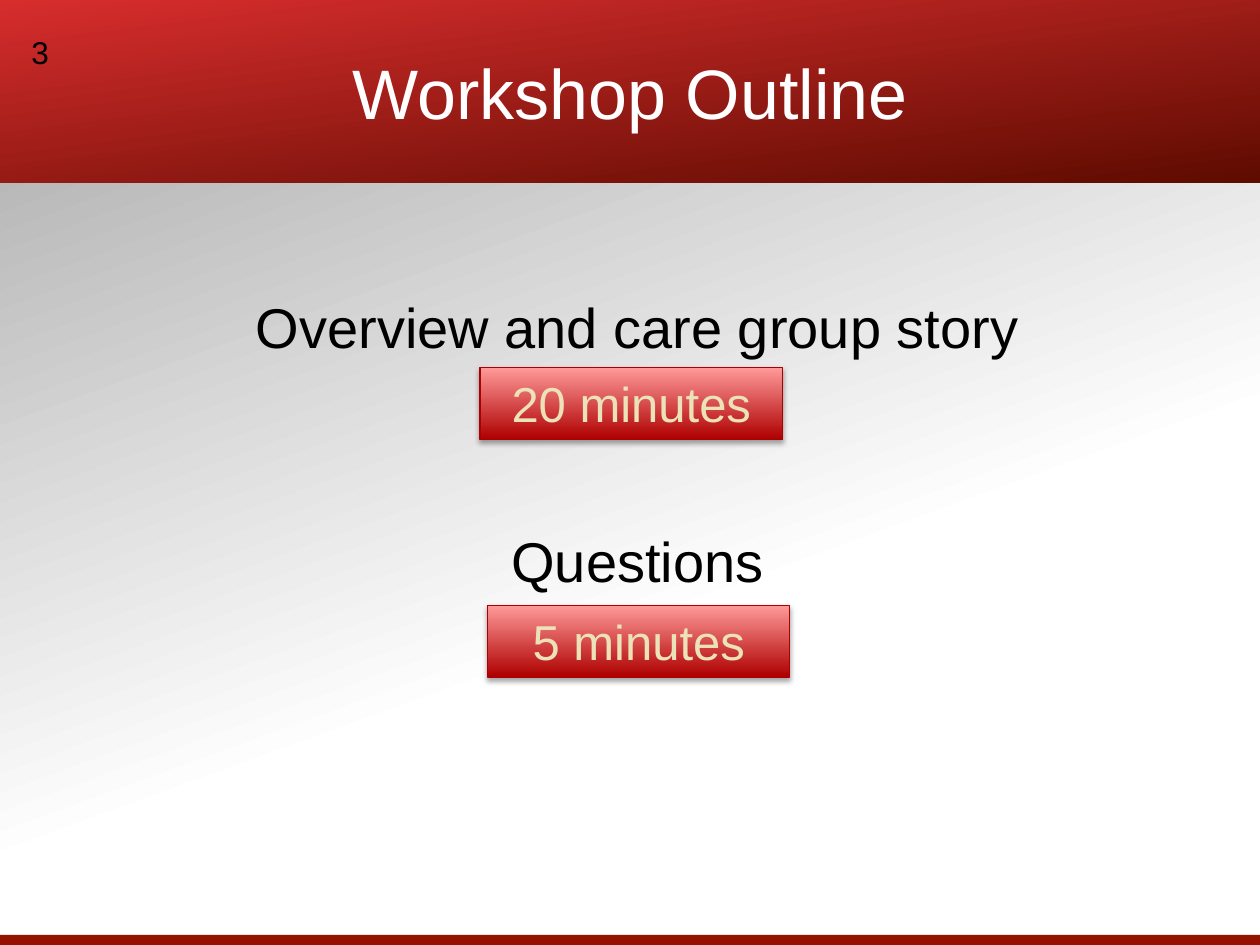
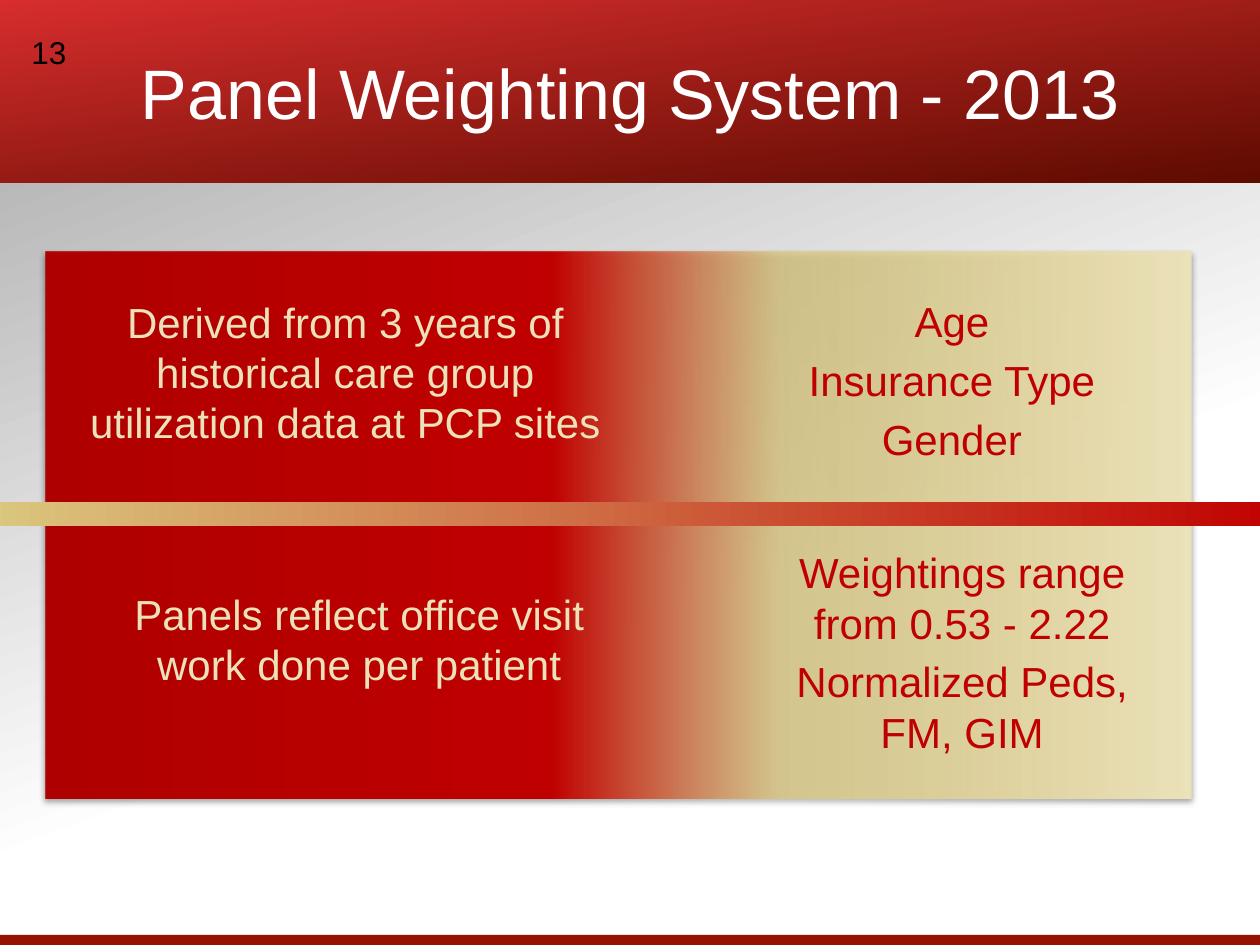
from dataclasses import dataclass
from typing import Optional

from lxml.etree import SubElement
from pptx import Presentation
from pptx.dml.color import RGBColor
from pptx.enum.shapes import MSO_SHAPE as Preset
from pptx.enum.text import MSO_ANCHOR as Anchor, MSO_AUTO_SIZE as AutoSize, PP_ALIGN as Align
from pptx.oxml.ns import qn
from pptx.util import Pt

FONT = "Arial"
COLORS = {
    "white": "FFFFFF", "black": "000000", "gray": "A6A6A6",
    "title_light": "D72D2D", "title_dark": "5E0B00", "footer": "951100",
    "deep_red": "AE0000", "red": "C00000", "pink": "FF9999", "edge": "AA0000",
    "gold": "DBC97F", "cream": "ECE2BA",
}


@dataclass(frozen=True)
class Box:
    left: float
    top: float
    width: float
    height: float

    def lengths(self) -> tuple:
        return Pt(self.left), Pt(self.top), Pt(self.width), Pt(self.height)


@dataclass(frozen=True)
class Stop:
    position: int
    color: str
    opacity: int = 100


@dataclass(frozen=True)
class Gradient:
    stops: tuple
    angle: int


@dataclass(frozen=True)
class Note:
    box: Box
    lines: tuple
    color: str
    indent: float = 0


# Shared look
BACKDROP = Gradient((Stop(0, "gray"), Stop(62, "white"), Stop(100, "white")), 70)
TITLE_BAND = Gradient((Stop(0, "title_light"), Stop(100, "title_dark")), 83)
PILL = Gradient((Stop(0, "deep_red"), Stop(100, "pink")), 270)
PANEL = Gradient((Stop(0, "deep_red"), Stop(44, "red"),
                  Stop(64, "gold", 76), Stop(100, "cream")), 0)
DIVIDER = Gradient((Stop(0, "gold"), Stop(100, "red")), 0)

TITLE_BOX = Box(0, 0, 720, 104.4)
FOOTER_BOX = Box(0, 534.2, 720, 7.2)
NUMBER_BOX = Box(10.8, 15.1, 64, 28.8)

# Workshop outline
AGENDA_BOX = Box(37.4, 163.4, 653.8, 182.2)
AGENDA = ("Overview and care group story", "Questions")
AGENDA_GAP = 95.4
DURATIONS = (
    Note(Box(274.3, 210.2, 172.8, 41), ("20 minutes",), "cream"),
    Note(Box(278.6, 346.0, 172.8, 41), ("5 minutes",), "cream"),
)

# Panel weighting
PANEL_BOX = Box(25.9, 144, 655.2, 312.5)
DIVIDER_BOX = Box(-13, 286.6, 750.2, 13.7)
SOURCE_NOTE = Note(
    Box(43.2, 165.6, 308.2, 108),
    ("Derived from 3 years of historical care group utilization data at PCP sites",),
    "cream")
WEIGHTING_NOTES = (
    Note(Box(403.2, 308.9, 270.7, 169.2),
         ("Weightings range from 0.53 - 2.22", "Normalized Peds, FM, GIM"), "red", 22.5),
    Note(Box(51.1, 332.6, 308.2, 122.4),
         ("Panels reflect office visit work done per patient",), "cream"),
    Note(Box(403.2, 165.6, 263.5, 108), ("Age", "Insurance Type", "Gender"), "red", 18),
)


def rgb(name: str) -> RGBColor:
    return RGBColor.from_string(COLORS[name])


def place(shape, box: Box) -> None:
    shape.left, shape.top, shape.width, shape.height = box.lengths()


def paint_gradient(fill, properties, gradient: Gradient) -> None:
    """Fill with any number of stops, at a clockwise angle."""
    fill.gradient()
    element = properties.find(qn("a:gradFill"))
    for child in list(element):
        element.remove(child)
    stop_list = SubElement(element, qn("a:gsLst"))
    for stop in gradient.stops:
        mark = SubElement(stop_list, qn("a:gs"), pos=str(stop.position * 1000))
        color = SubElement(mark, qn("a:srgbClr"), val=COLORS[stop.color])
        if stop.opacity < 100:
            SubElement(color, qn("a:alpha"), val=str(stop.opacity * 1000))
    SubElement(element, qn("a:lin"), ang=str(gradient.angle * 60000), scaled="0")


def cast_shadow(shape) -> None:
    effects = shape.element.spPr.find(qn("a:effectLst"))
    shadow = SubElement(effects, qn("a:outerShdw"), blurRad=str(Pt(3.1)),
                        dist=str(Pt(1.8)), dir="5400000", rotWithShape="0")
    color = SubElement(shadow, qn("a:srgbClr"), val=COLORS["black"])
    SubElement(color, qn("a:alpha"), val="35000")


def write(shape, lines: tuple, *, size: float, color: str, align=Align.CENTER,
          anchor=Anchor.TOP, gap: Optional[float] = None, indent: float = 0) -> None:
    """Write one paragraph a line; the gap defaults to a fifth of the size."""
    frame = shape.text_frame
    frame.word_wrap = True
    frame.auto_size = AutoSize.NONE
    frame.vertical_anchor = anchor
    for index, line in enumerate(lines):
        paragraph = frame.paragraphs[0] if index == 0 else frame.add_paragraph()
        run = paragraph.add_run()
        run.text = line
        properties = paragraph._p.get_or_add_pPr()
        properties.set("marL", str(Pt(indent)))
        properties.set("indent", "0")
        SubElement(properties, qn("a:buNone"))
        paragraph.alignment = align
        spacing = size * 0.2 if gap is None else gap
        paragraph.space_before = Pt(spacing if index else 0)
        run.font.name, run.font.size = FONT, Pt(size)
        run.font.color.rgb = rgb(color)


def add_block(slide, box: Box, gradient: Optional[Gradient] = None, *,
              preset=Preset.RECTANGLE, color: str = "footer",
              edge: Optional[str] = None, shadow: bool = False):
    block = slide.shapes.add_shape(preset, *box.lengths())
    block.shadow.inherit = False
    if gradient:
        paint_gradient(block.fill, block.element.spPr, gradient)
    else:
        block.fill.solid()
        block.fill.fore_color.rgb = rgb(color)
    if edge:
        block.line.color.rgb = rgb(edge)
        block.line.width = Pt(0.75)
    else:
        block.line.fill.background()
    if shadow:
        cast_shadow(block)
    return block


def add_note(slide, note: Note) -> None:
    words = slide.shapes.add_textbox(*note.box.lengths())
    write(words, note.lines, size=24, color=note.color, indent=note.indent)


def start_slide(deck, heading: str, number: str):
    """Add a slide with its title band, footer bar and number."""
    slide = deck.slides.add_slide(deck.slide_layouts[1])
    title = slide.shapes.title
    place(title, TITLE_BOX)
    paint_gradient(title.fill, title.element.spPr, TITLE_BAND)
    write(title, (heading,), size=40, color="white", anchor=Anchor.MIDDLE)
    add_block(slide, FOOTER_BOX)
    page = slide.shapes.add_textbox(*NUMBER_BOX.lengths())
    write(page, (number,), size=18, color="black", align=Align.LEFT)
    return slide


def build_outline(deck) -> None:
    slide = start_slide(deck, "Workshop Outline", "3")
    agenda = slide.placeholders[1]
    place(agenda, AGENDA_BOX)
    write(agenda, AGENDA, size=32, color="black", gap=AGENDA_GAP)
    for duration in DURATIONS:
        pill = add_block(slide, duration.box, PILL, edge="edge", shadow=True)
        write(pill, duration.lines, size=28, color=duration.color)


def build_weighting(deck) -> None:
    slide = start_slide(deck, "Panel Weighting System - 2013", "13")
    source = slide.placeholders[1]
    place(source, SOURCE_NOTE.box)
    write(source, SOURCE_NOTE.lines, size=24, color=SOURCE_NOTE.color)

    # The panel lies behind the source text
    panel = add_block(slide, PANEL_BOX, PANEL, preset=Preset.ROUNDED_RECTANGLE, shadow=True)
    panel.adjustments[0] = 0
    source.element.addprevious(panel.element)

    for note in WEIGHTING_NOTES:
        add_note(slide, note)
    add_block(slide, DIVIDER_BOX, DIVIDER, preset=Preset.ROUNDED_RECTANGLE)


def main() -> None:
    deck = Presentation()
    deck.slide_width, deck.slide_height = Pt(720), Pt(540)
    master = deck.slide_master
    fill = master.background.fill
    paint_gradient(fill, master.element.find(".//" + qn("p:bgPr")), BACKDROP)
    build_outline(deck)
    build_weighting(deck)
    deck.save("out.pptx")


if __name__ == "__main__":
    main()
